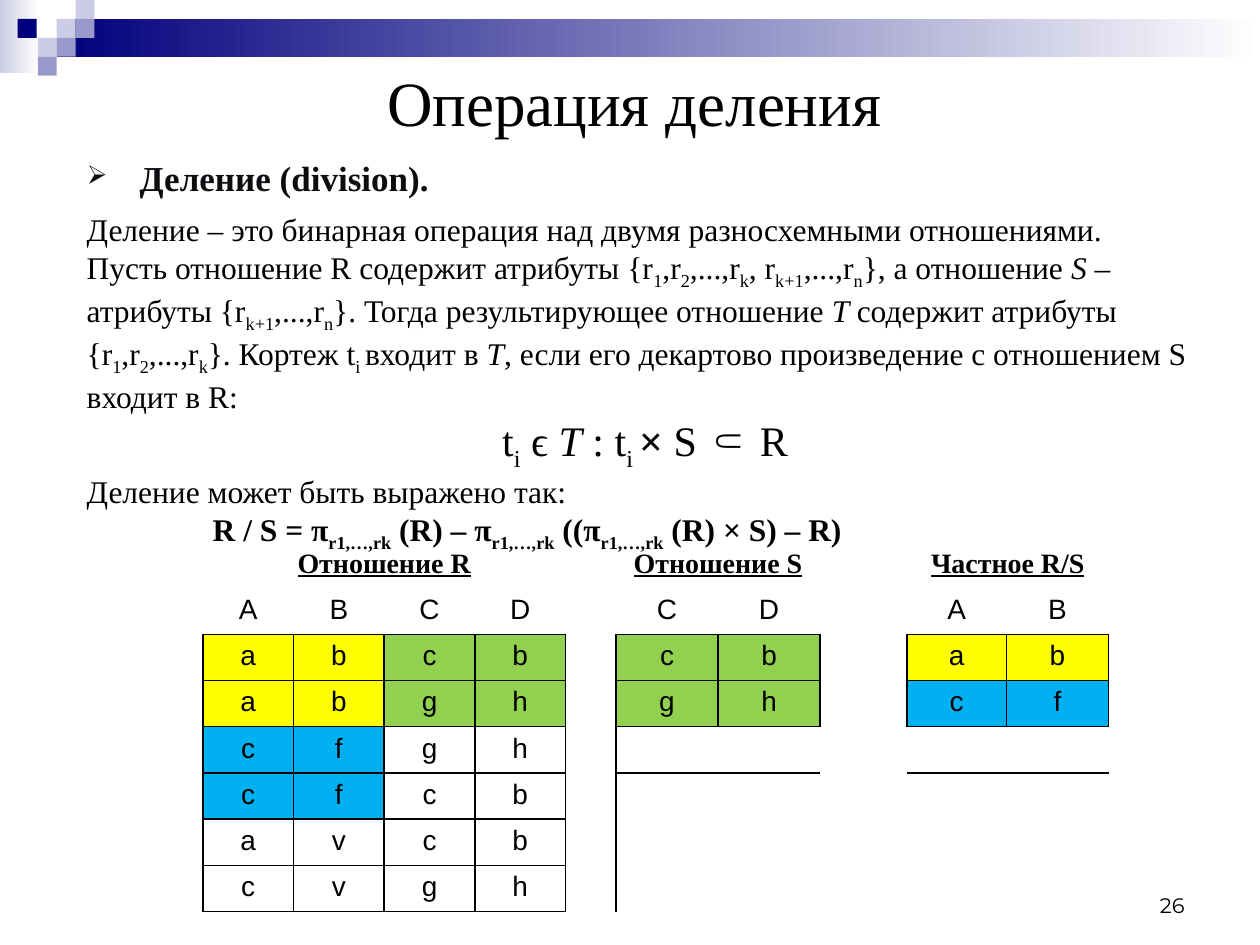
from lxml import etree
from pptx import Presentation
from pptx.dml.color import RGBColor
from pptx.enum.shapes import MSO_SHAPE
from pptx.enum.text import MSO_ANCHOR, PP_ALIGN
from pptx.oxml.ns import qn
from pptx.util import Inches, Pt

RECTANGLE = MSO_SHAPE.RECTANGLE
TOP, BOTTOM = MSO_ANCHOR.TOP, MSO_ANCHOR.BOTTOM
LEFT, CENTER, RIGHT = PP_ALIGN.LEFT, PP_ALIGN.CENTER, PP_ALIGN.RIGHT

BLACK = RGBColor(0x00, 0x00, 0x00)
INK = RGBColor(0x0D, 0x0D, 0x11)
WHITE = RGBColor(0xFF, 0xFF, 0xFF)
NAVY = RGBColor(0x00, 0x00, 0x7D)
LAVENDER = RGBColor(0xCC, 0xCC, 0xE6)
PERIWINKLE = RGBColor(0x99, 0x99, 0xCC)
TUPLE_COLORS = {
    "Y": RGBColor(0xFF, 0xFF, 0x00),
    "G": RGBColor(0x92, 0xD0, 0x50),
    "B": RGBColor(0x00, 0xB0, 0xF0),
}

SERIF = "Times New Roman"
NO_TABLE_STYLE = "{2D5ABB26-0587-4C30-8999-92F81FD0307C}"

SQUARE = 0.15
SQUARES = [
    (0.45, 0.15, LAVENDER), (0.6, 0, LAVENDER), (0.6, 0.15, PERIWINKLE),
    (0.3, 0.3, LAVENDER), (0.14, 0.15, NAVY), (0.45, 0.3, PERIWINKLE),
    (0.3, 0.45, PERIWINKLE),
]

# Markup: ~subscript~, *italic*, ^bold^
DEFINITION = [
    ("Деление – это бинарная операция над двумя разносхемными отношениями.", 18, LEFT, 0),
    ("Пусть отношение R содержит атрибуты {r~1~,r~2~,...,r~k~, r~k+1~,...,r~n~}, "
     "а отношение *S* – атрибуты {r~k+1~,...,r~n~}. Тогда результирующее отношение "
     "*T *содержит атрибуты {r~1~,r~2~,...,r~k~}. Кортеж t~i ~входит в *T*, если его "
     "декартово произведение с отношением S входит в R:", 18, LEFT, 0),
    ("t~i~ ϵ *T* : t~i ~^× ^S ⸦ R", 24, CENTER, 0),
    ("Деление может быть выражено так:", 18, LEFT, 0),
    ("^R / S = π~r1,…,rk~ (R) – π~r1,…,rk~ ((π~r1,…,rk~ (R) × S) – R)^", 18, LEFT, 1),
]

COLUMN_WIDTHS = [0.72] * 4 + [0.4, 0.81, 0.81, 0.69, 0.79, 0.81]
RELATION_TITLES = [(0, 3, "Отношение R"), (5, 6, "Отношение S"), (8, 9, "Частное R/S")]
RELATION_ROWS = [" " * 10, "ABCD CD AB", "abcb cb ab", "abgh gh cf",
                 "cfgh      ", "cfcb      ", "avcb      ", "cvgh      "]
RELATION_FILLS = [" " * 10, " " * 10, "YYGG GG YY", "YYGG GG BB",
                  "BB        ", "BB        ", " " * 10, " " * 10]
BORDER_SIDES = [("a:lnL", 0, -1), ("a:lnR", 0, 1), ("a:lnT", -1, 0), ("a:lnB", 1, 0)]


def add_block(slide, left, top, width, height, color, fade_to=None):
    block = slide.shapes.add_shape(
        RECTANGLE, Inches(left), Inches(top), Inches(width), Inches(height))
    block.shadow.inherit = False
    block.line.fill.background()
    if fade_to is None:
        block.fill.solid()
        block.fill.fore_color.rgb = color
        return
    block.fill.gradient()
    block.fill.gradient_angle = 0
    for stop, stop_color in zip(block.fill.gradient_stops, (color, fade_to)):
        stop.color.rgb = stop_color


def add_text_frame(slide, left, top, width, height, anchor=TOP):
    frame = slide.shapes.add_textbox(
        Inches(left), Inches(top), Inches(width), Inches(height)).text_frame
    frame.word_wrap = True
    frame.vertical_anchor = anchor
    return frame


def style_paragraph(paragraph, size, align=LEFT, face=SERIF, color=BLACK):
    paragraph.alignment = align
    paragraph.font.size = Pt(size)
    paragraph.font.name = face
    paragraph.font.color.rgb = color


def add_marked_runs(paragraph, marked):
    for b, bold_part in enumerate(marked.split("^")):
        for i, italic_part in enumerate(bold_part.split("*")):
            for s, text in enumerate(italic_part.split("~")):
                if not text:
                    continue
                run = paragraph.add_run()
                run.text = text
                if b % 2:
                    run.font.bold = True
                if i % 2:
                    run.font.italic = True
                if s % 2:
                    run.font._element.set("baseline", "-25000")


def add_bullet(paragraph, symbol, color, percent, indent):
    properties = paragraph._p.get_or_add_pPr()
    properties.set("marL", str(Inches(indent)))
    properties.set("indent", str(-Inches(indent)))
    bullet_color = etree.Element(qn("a:buClr"))
    etree.SubElement(bullet_color, qn("a:srgbClr"), val=str(color))
    bullet_size = etree.Element(qn("a:buSzPct"), val=str(percent * 1000))
    bullet = etree.Element(qn("a:buChar"), char=symbol)
    defaults = properties.find(qn("a:defRPr"))
    for part in (bullet_color, bullet_size, bullet):
        defaults.addprevious(part)


def add_definition(slide):
    frame = add_text_frame(slide, 0.59, 1.62, 9.06, 2.62)
    for index, (marked, size, align, indent) in enumerate(DEFINITION):
        paragraph = frame.add_paragraph() if index else frame.paragraphs[0]
        style_paragraph(paragraph, size, align)
        if indent:
            paragraph._p.get_or_add_pPr().set("marL", str(Inches(indent)))
        add_marked_runs(paragraph, marked)


def is_boxed(row, column):
    return (2 <= row < len(RELATION_ROWS) and 0 <= column < len(COLUMN_WIDTHS)
            and RELATION_ROWS[row][column] != " ")


def add_borders(cell, row, column):
    properties = cell._tc.get_or_add_tcPr()
    position = 0
    for tag, down, across in BORDER_SIDES:
        if is_boxed(row, column) or is_boxed(row + down, column + across):
            border = etree.Element(qn(tag), w=str(Pt(1)))
            fill = etree.SubElement(border, qn("a:solidFill"))
            etree.SubElement(fill, qn("a:srgbClr"), val=str(BLACK))
            properties.insert(position, border)
            position += 1


def fill_cell(cell, text, color):
    if color is None:
        cell.fill.background()
    else:
        cell.fill.solid()
        cell.fill.fore_color.rgb = color
    if text == " ":
        cell.margin_top = cell.margin_bottom = 0
        return
    cell.text = text
    style_paragraph(cell.text_frame.paragraphs[0], 16, CENTER, "Arial")


def add_relations(slide):
    table = slide.shapes.add_table(
        len(RELATION_ROWS), len(COLUMN_WIDTHS), Inches(1.61), Inches(4.3),
        Inches(sum(COLUMN_WIDTHS)), Inches(2.93)).table
    table.first_row = table.horz_banding = False
    table._tbl.tblPr.find(qn("a:tableStyleId")).text = NO_TABLE_STYLE
    for column, width in zip(table.columns, COLUMN_WIDTHS):
        column.width = Inches(width)
    for r, (letters, fills) in enumerate(zip(RELATION_ROWS, RELATION_FILLS)):
        for c, (letter, fill) in enumerate(zip(letters, fills)):
            cell = table.cell(r, c)
            fill_cell(cell, letter, TUPLE_COLORS.get(fill))
            add_borders(cell, r, c)
    for first, last, title in RELATION_TITLES:
        heading = table.cell(0, first)
        heading.merge(table.cell(0, last))
        heading.margin_top = heading.margin_bottom = Inches(0.05)
        heading.text = title
        paragraph = heading.text_frame.paragraphs[0]
        style_paragraph(paragraph, 16, CENTER)
        paragraph.font.bold = paragraph.font.underline = True


def main():
    deck = Presentation()
    deck.slide_width, deck.slide_height = Inches(10), Inches(7.5)
    slide = deck.slides.add_slide(deck.slide_layouts[6])

    add_block(slide, 0, 0, 0.31, 0.58, LAVENDER, WHITE)
    add_block(slide, 0.45, 0.15, 9.55, 0.3, NAVY, WHITE)
    for left, top, color in SQUARES:
        add_block(slide, left, top, SQUARE, SQUARE, color)

    title = add_text_frame(slide, 0.43, 0.36, 9.21, 0.79, BOTTOM).paragraphs[0]
    title.text = "Операция деления"
    style_paragraph(title, 36, CENTER)

    term = add_text_frame(slide, 0.59, 1.23, 8.98, 0.39).paragraphs[0]
    term.text = "Деление (division)."
    style_paragraph(term, 20, color=INK)
    term.font.bold = True
    term.line_spacing = 0.9
    term.space_before = Pt(4)
    add_bullet(term, "➢", INK, 75, 0.42)

    add_relations(slide)
    add_definition(slide)

    page_number = add_text_frame(slide, 7.17, 6.83, 2.33, 0.5, BOTTOM).paragraphs[0]
    page_number.text = "26"
    style_paragraph(page_number, 12, RIGHT, "Montserrat")

    deck.save("out.pptx")


if __name__ == "__main__":
    main()
